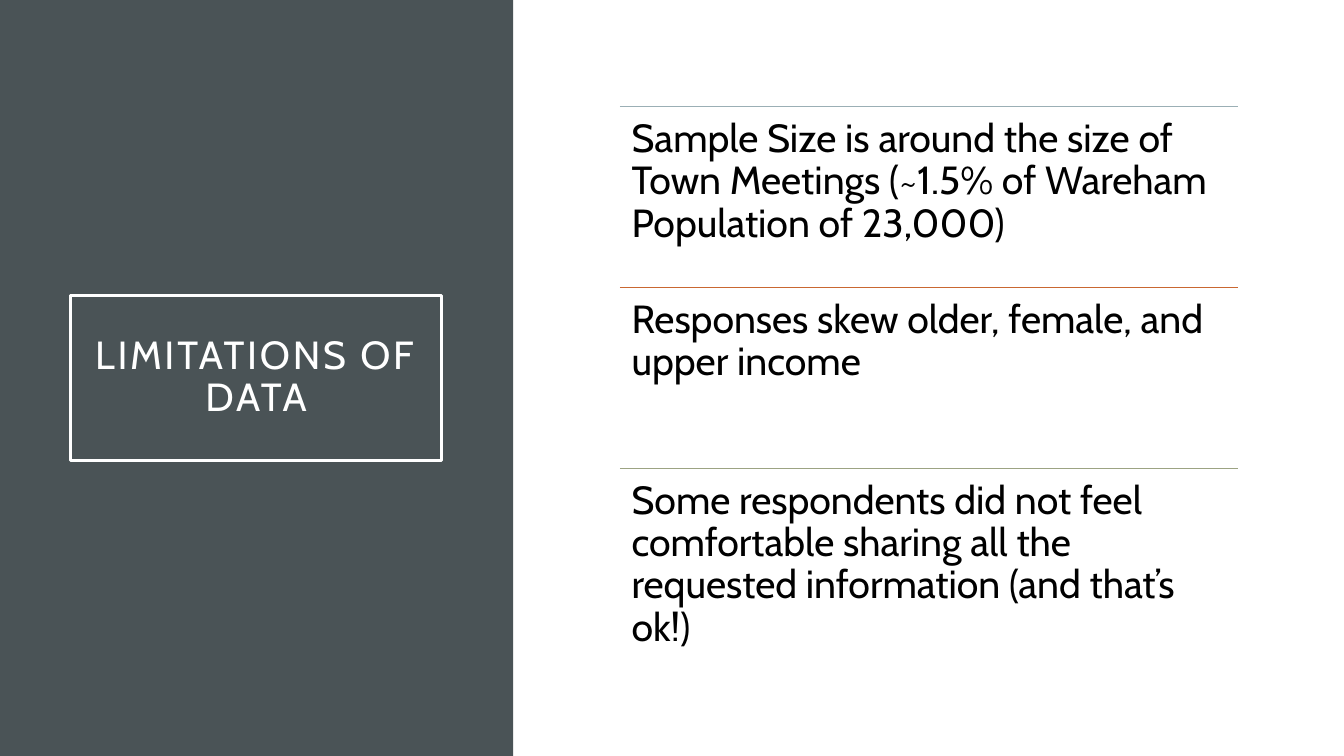
import dataclasses

import pptx
import pptx.dml.color
import pptx.enum.shapes
import pptx.enum.text
import pptx.oxml.ns
import pptx.util
from lxml import etree

Pt = pptx.util.Pt
ALIGN = pptx.enum.text.PP_ALIGN
ANCHOR = pptx.enum.text.MSO_ANCHOR
RECT = pptx.enum.shapes.MSO_SHAPE.RECTANGLE

SLIDE_W, SLIDE_H = 960, 540
PANEL_W = 366.5
LIST_X, LIST_Y, LIST_W, ROW_H = 442.8, 76.3, 441.4, 129.2


@dataclasses.dataclass
class Limitation:
    text: str
    rule_color: str


LIMITATIONS = [
    Limitation("Sample Size is around the size of Town Meetings "
               "(~1.5% of Wareham Population of 23,000)", "9BAFB5"),
    Limitation("Responses skew older, female, and upper income", "C96731"),
    Limitation("Some respondents did not feel comfortable sharing all the "
               "requested information (and that’s ok!)", "9CA383"),
]


def rgb(value: str) -> pptx.dml.color.RGBColor:
    return pptx.dml.color.RGBColor.from_string(value)


def add_rect(s, x: float, y: float, w: float, h: float,
             fill: str | None = None, line: str | None = None,
             weight: float = 1):
    sp = s.shapes.add_shape(RECT, Pt(x), Pt(y), Pt(w), Pt(h))
    sp.shadow.inherit = False
    if fill:
        sp.fill.solid()
        sp.fill.fore_color.rgb = rgb(fill)
    else:
        sp.fill.background()
    if line:
        sp.line.color.rgb = rgb(line)
        sp.line.width = Pt(weight)
    else:
        sp.line.fill.background()
    return sp


def add_rule(s, x: float, y: float, w: float, color: str) -> None:
    line = s.shapes.add_connector(pptx.enum.shapes.MSO_CONNECTOR.STRAIGHT,
                                  Pt(x), Pt(y), Pt(x + w), Pt(y))
    line.line.color.rgb = rgb(color)
    line.line.width = Pt(0.5)
    etree.SubElement(line._element.spPr, pptx.oxml.ns.qn("a:effectLst"))


def set_text(sp, text: str, *, color: str = "000000", align=ALIGN.LEFT,
             anchor=ANCHOR.TOP, inset: float = 8.4, spacing: float = 0) -> None:
    tf = sp.text_frame
    tf.word_wrap = True
    tf.vertical_anchor = anchor
    tf.margin_left = tf.margin_right = Pt(inset)
    tf.margin_top = tf.margin_bottom = Pt(inset)
    p = tf.paragraphs[0]
    p.alignment = align
    p.line_spacing = 0.9
    r = p.add_run()
    r.text = text
    r.font.name = "Cabin"
    r.font.size = Pt(28)
    r.font.color.rgb = rgb(color)
    if spacing:
        r.font._element.set("spc", str(round(spacing * 100)))


def main() -> None:
    prs = pptx.Presentation()
    prs.slide_width, prs.slide_height = Pt(SLIDE_W), Pt(SLIDE_H)
    s = prs.slides.add_slide(prs.slide_layouts[6])

    # Side panel with framed title
    add_rect(s, 0, 0, PANEL_W, SLIDE_H, fill="4A5356")
    title = add_rect(s, 50.4, 211, 265, 118, line="FFFFFF", weight=2.5)
    set_text(title, "LIMITATIONS OF DATA", color="FFFFFF", align=ALIGN.CENTER,
             anchor=ANCHOR.MIDDLE, inset=14.4, spacing=2)

    # Ruled list of limitations
    for i, item in enumerate(LIMITATIONS):
        y = LIST_Y + i * ROW_H
        add_rule(s, LIST_X, y, LIST_W, item.rule_color)
        box = s.shapes.add_textbox(Pt(LIST_X), Pt(y), Pt(LIST_W), Pt(ROW_H))
        set_text(box, item.text)

    prs.save("out.pptx")


if __name__ == "__main__":
    main()
